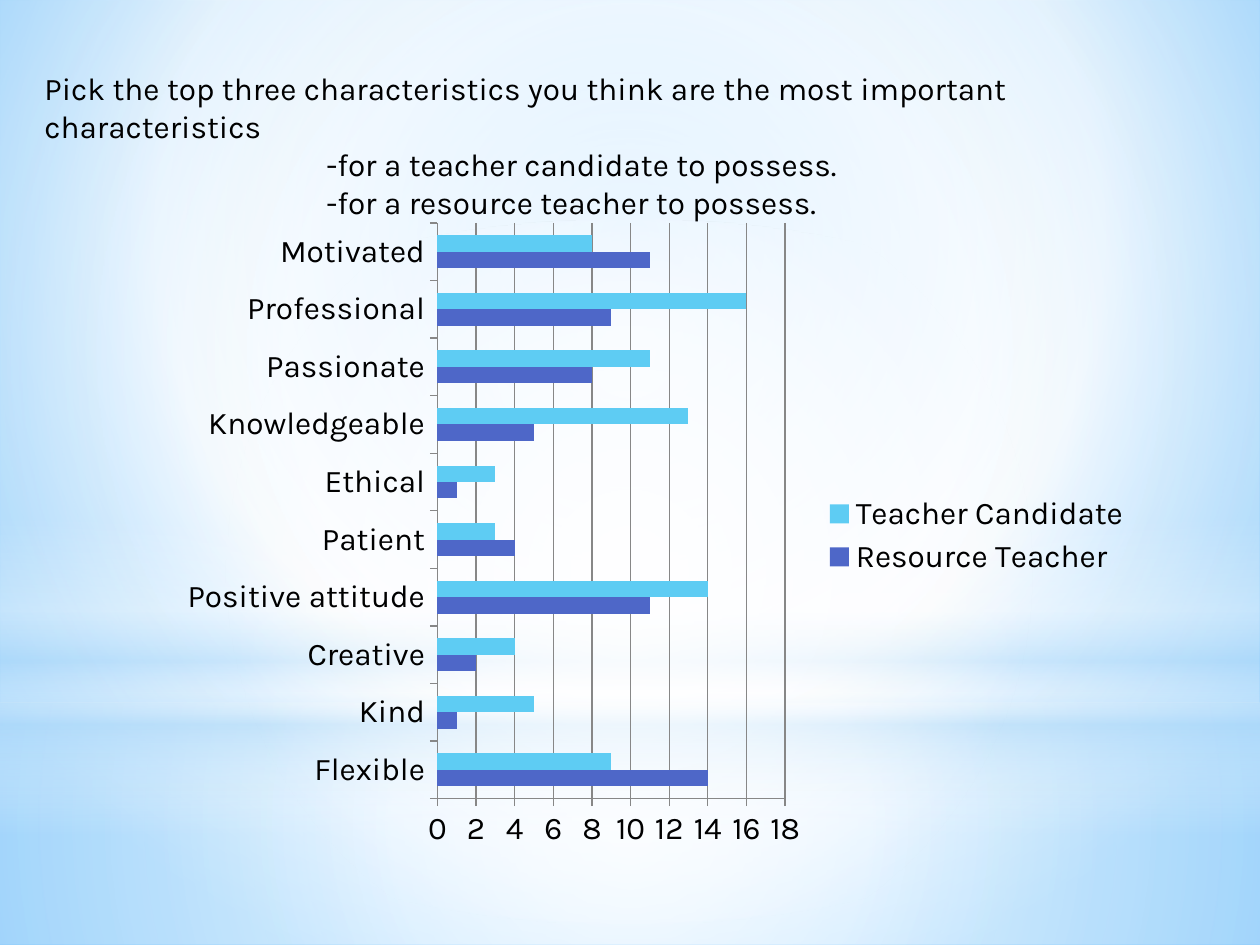
from lxml import etree
from pptx import Presentation, util as u
from pptx.chart.data import CategoryChartData
from pptx.dml.color import RGBColor
from pptx.enum import chart as ch, shapes, text
from pptx.oxml import ns

WHITE = RGBColor(0xFF, 0xFF, 0xFF)
BLACK = RGBColor(0, 0, 0)
PALE = RGBColor(0xB4, 0xDC, 0xFA)
SKY = RGBColor(0x9E, 0xD5, 0xFF)
AZURE = RGBColor(0x5B, 0xB9, 0xFF)
INDIGO = RGBColor(0x4E, 0x67, 0xC8)
CYAN = RGBColor(0x5E, 0xCC, 0xF3)
GREY = RGBColor(0x87, 0x87, 0x87)
CENTRE = (50, 50, 50, 50)


class Deck:
    emu_per_px = 914400 / 126
    font_name = "Karla"
    font_size = u.Pt(18)

    def __init__(self, width, height):
        self.prs = Presentation()
        self.prs.slide_width, self.prs.slide_height = self.px(width, height)
        self.slide = self.prs.slides.add_slide(self.prs.slide_layouts[6])

    def px(self, *lengths):
        return [u.Emu(round(length * self.emu_per_px)) for length in lengths]

    def style_font(self, font):
        font.name = self.font_name
        font.size = self.font_size
        font.color.rgb = BLACK

    def gradient(self, fill, owner, stops, focus=None, angle=0):
        fill.gradient()
        grad = owner.find(".//" + ns.qn("a:gradFill"))
        for child in list(grad):
            grad.remove(child)
        stop_list = etree.SubElement(grad, ns.qn("a:gsLst"))
        for position, color, opacity in stops:
            stop = etree.SubElement(stop_list, ns.qn("a:gs"), pos=str(position * 1000))
            tint = etree.SubElement(stop, ns.qn("a:srgbClr"), val=str(color))
            if opacity < 100:
                etree.SubElement(tint, ns.qn("a:alpha"), val=str(opacity * 1000))
        if focus:
            path = etree.SubElement(grad, ns.qn("a:path"))
            path.set("path", "circle")
            edges = {side: str(share * 1000) for side, share in zip("ltrb", focus)}
            etree.SubElement(path, ns.qn("a:fillToRect"), edges)
        else:
            etree.SubElement(grad, ns.qn("a:lin"), ang=str(angle * 60000), scaled="0")

    def background(self, stops, focus):
        self.gradient(self.slide.background.fill, self.slide.element, stops, focus)

    def glow(self, kind, box, stops, focus=None, angle=0):
        shape = self.slide.shapes.add_shape(kind, *self.px(*box))
        shape.shadow.inherit = False
        shape.line.fill.background()
        self.gradient(shape.fill, shape.element, stops, focus, angle)

    def bar_chart(self, box, categories, series, top, step):
        data = CategoryChartData()
        data.categories = categories
        for name, color, values in series:
            data.add_series(name, values)
        chart = self.slide.shapes.add_chart(
            ch.XL_CHART_TYPE.BAR_CLUSTERED, *self.px(*box), data).chart
        self.style_font(chart.font)
        chart.has_title = False
        chart.has_legend = True
        chart.legend.position = ch.XL_LEGEND_POSITION.RIGHT
        chart.legend.include_in_layout = False
        plot = chart.plots[0]
        plot.gap_width = 150
        plot.vary_by_categories = False
        for bars, (name, color, values) in zip(plot.series, series):
            bars.format.fill.solid()
            bars.format.fill.fore_color.rgb = color
            bars.invert_if_negative = False
        scale = chart.value_axis
        scale.minimum_scale, scale.maximum_scale, scale.major_unit = 0, top, step
        scale.has_major_gridlines = True
        scale.major_gridlines.format.line.color.rgb = GREY
        for axis in (chart.category_axis, scale):
            axis.major_tick_mark = ch.XL_TICK_MARK.OUTSIDE
            axis.format.line.color.rgb = GREY

    def text_box(self, box, lines):
        frame = self.slide.shapes.add_textbox(*self.px(*box)).text_frame
        frame.word_wrap = True
        frame.auto_size = text.MSO_AUTO_SIZE.NONE
        for number, (line, indent) in enumerate(lines):
            paragraph = frame.add_paragraph() if number else frame.paragraphs[0]
            paragraph.text = line
            self.style_font(paragraph.runs[0].font)
            if indent:
                margin = self.px(indent)[0]
                paragraph._p.get_or_add_pPr().set("marL", str(margin))

    def save(self):
        self.prs.save("out.pptx")


def main():
    deck = Deck(1260, 945)
    rectangle, oval = shapes.MSO_SHAPE.RECTANGLE, shapes.MSO_SHAPE.OVAL

    deck.background([(0, SKY, 100), (60, WHITE, 100), (100, AZURE, 100)], (20, 10, 20, 60))
    deck.glow(rectangle, (0, 703, 1260, 242),
              [(0, WHITE, 91), (37, WHITE, 76), (100, PALE, 79)], CENTRE)
    deck.glow(rectangle, (0, 0, 1260, 703),
              [(0, WHITE, 89), (48, WHITE, 62), (100, PALE, 79)], CENTRE)
    deck.glow(rectangle, (0, 519, 1260, 315),
              [(0, WHITE, 0), (29, WHITE, 30), (45, PALE, 40),
               (55, WHITE, 26), (65, PALE, 60), (100, WHITE, 0)], angle=90)
    deck.glow(oval, (0, 220, 1260, 703), [(0, WHITE, 100), (56, WHITE, 0)], CENTRE)

    traits = ["Flexible", "Kind", "Creative", "Positive attitude", "Patient", "Ethical",
              "Knowledgeable", "Passionate", "Professional", "Motivated"]
    votes = [("Resource Teacher", INDIGO, [14, 1, 2, 11, 4, 1, 5, 8, 9, 11]),
             ("Teacher Candidate", CYAN, [9, 5, 4, 14, 3, 3, 13, 11, 16, 8])]
    deck.bar_chart((168, 210, 976, 651), traits, votes, top=18, step=2)

    deck.text_box((32, 63, 1197, 127), [
        ("Pick the top three characteristics you think are the most important characteristics", 0),
        ("-for a teacher candidate to possess.", 282),
        ("-for a resource teacher to possess.", 282)])
    deck.save()


if __name__ == "__main__":
    main()
